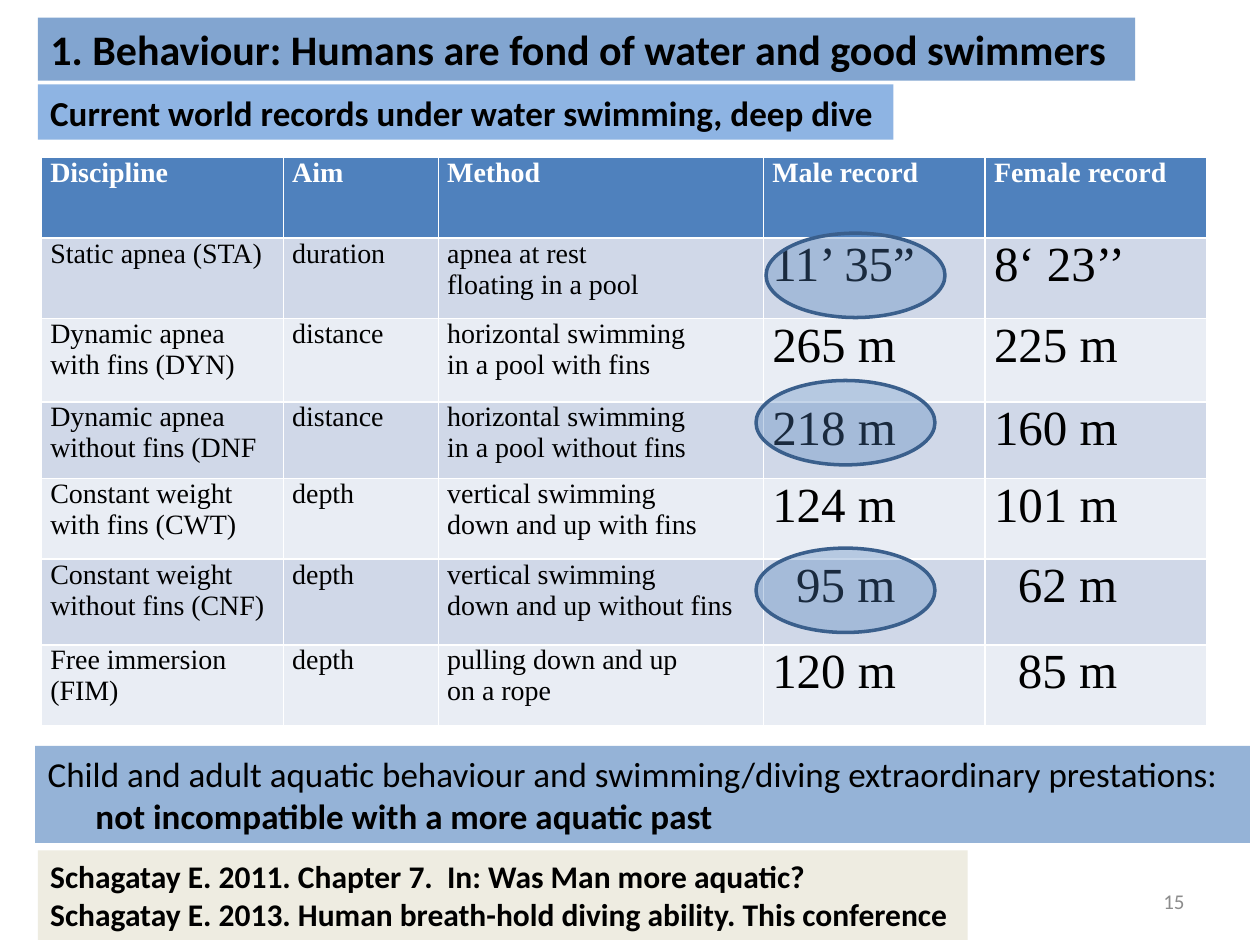
from dataclasses import dataclass

from lxml import etree
from pptx import Presentation
from pptx.dml.color import RGBColor
from pptx.enum.shapes import MSO_SHAPE
from pptx.enum.text import MSO_ANCHOR, MSO_AUTO_SIZE, PP_ALIGN
from pptx.oxml.ns import qn
from pptx.util import Inches, Pt

RECT, OVAL = MSO_SHAPE.RECTANGLE, MSO_SHAPE.OVAL
MIDDLE, NO_FIT = MSO_ANCHOR.MIDDLE, MSO_AUTO_SIZE.NONE
LEFT, RIGHT = PP_ALIGN.LEFT, PP_ALIGN.RIGHT


@dataclass(frozen=True)
class Theme:
    sans: str = "Calibri"
    serif: str = "Times New Roman"
    ink: str = "000000"
    white: str = "FFFFFF"
    accent: str = "4F81BD"
    outline: str = "3A5F8C"
    subtitle: str = "8EB4E3"
    conclusion: str = "95B3D7"
    sources: str = "EEECE1"
    muted: str = "8C8C8C"
    bands: tuple = ("E9EDF4", "D0D8E8")
    title_size: int = 24
    lead_size: int = 20
    source_size: int = 18
    cell_size: int = 16
    record_size: int = 28
    number_size: int = 12


T = Theme()
prs = Presentation()
prs.slide_width, prs.slide_height = Inches(10), Inches(7.5)
s = prs.slides.add_slide(prs.slide_layouts[5])


def share(x, y, w, h):
    """Turn percentages of the slide's width and height into lengths."""
    pw, ph = prs.slide_width / 100, prs.slide_height / 100
    return int(x * pw), int(y * ph), int(w * pw), int(h * ph)


def style(p, text, size, color=T.ink, bold=False, font=T.sans, align=LEFT, indent=0):
    """Write a paragraph; its indent is in inches."""
    p.text, p.alignment = text, align
    if indent:
        p._p.get_or_add_pPr().set("marL", str(Inches(indent)))
    p.font.name, p.font.size, p.font.bold = font, Pt(size), bold
    p.font.color.rgb = RGBColor.from_string(color)


# Title
title = s.shapes.title
title.left, title.top, title.width, title.height = share(3, 1.87, 87.1, 6.67)
title.text_frame.auto_size = NO_FIT
title.text_frame.vertical_anchor = MIDDLE
style(title.text_frame.paragraphs[0],
      "1. Behaviour: Humans are fond of water and good swimmers", T.title_size, bold=True)

# Table of records
columns = [19.2, 12.3, 25.8, 17.6, 17.6]
rows = [8.53, 8.53, 8.8, 8.13, 8.53, 9.07, 8.53]
records = [
    ("Discipline", "Aim", "Method", "Male record", "Female record"),
    ("Static apnea (STA)", "duration", "apnea at rest\nfloating in a pool", "11’ 35”", "8‘ 23’’"),
    ("Dynamic apnea with fins (DYN)", "distance",
     "horizontal swimming\nin a pool with fins", "265 m", "225 m"),
    ("Dynamic apnea without fins (DNF", "distance",
     "horizontal swimming\nin a pool without fins", "218 m", "160 m"),
    ("Constant weight with fins (CWT)", "depth",
     "vertical swimming\ndown and up with fins", "124 m", "101 m"),
    ("Constant weight without fins (CNF)", "depth",
     "vertical swimming\ndown and up without fins", "95 m", "62 m"),
    ("Free immersion (FIM)", "depth", "pulling down and up\non a rope", "120 m", "85 m"),
]
table = s.shapes.add_table(len(rows), len(columns),
                           *share(3.3, 16.67, sum(columns), sum(rows))).table
for col, width in zip(table.columns, columns):
    col.width = share(0, 0, width, 0)[2]
for i, (row, height) in enumerate(zip(table.rows, rows)):
    row.height = share(0, 0, 0, height)[3]
    header = i == 0
    for j, text in enumerate(records[i]):
        cell = table.cell(i, j)
        cell.margin_left = cell.margin_right = Inches(0.07)
        cell.margin_top = cell.margin_bottom = 0
        cell.fill.solid()
        cell.fill.fore_color.rgb = RGBColor.from_string(T.accent if header else T.bands[i % 2])
        record = j > 2 and not header
        two_digits = record and len(text) == len("95 m")
        tf = cell.text_frame
        for k, line in enumerate(text.split("\n")):
            p = tf.add_paragraph() if k else tf.paragraphs[0]
            style(p, line, T.record_size if record else T.cell_size,
                  T.white if header else T.ink, header, T.serif,
                  indent=0.19 if two_digits else 0)

# Filled text panels: place, colour, type size, lines of (text, bold, indent)
panels = [
    ((3, 8.93, 67.9, 5.87), T.subtitle, T.lead_size,
     [("Current world records under water swimming, deep dive", True, 0)]),
    ((3, 90, 73.8, 9.47), T.sources, T.source_size,
     [("Schagatay E. 2011. Chapter 7.  In: Was Man more aquatic?", True, 0),
      ("Schagatay E. 2013. Human breath-hold diving ability. This conference", True, 0)]),
    ((2.8, 78.93, 96.4, 10.27), T.conclusion, T.lead_size,
     [("Child and adult aquatic behaviour and swimming/diving extraordinary prestations:",
       False, 0),
      ("not incompatible with a more aquatic past", True, 0.38)]),
]
for place, color, size, lines in panels:
    sp = s.shapes.add_shape(RECT, *share(*place))
    sp.shadow.inherit = False
    sp.fill.solid()
    sp.fill.fore_color.rgb = RGBColor.from_string(color)
    sp.line.fill.background()
    tf = sp.text_frame
    tf.word_wrap = True
    for k, (text, bold, indent) in enumerate(lines):
        p = tf.add_paragraph() if k else tf.paragraphs[0]
        style(p, text, size, bold=bold, indent=indent)

# Ellipses around the highlighted male records
highlights = []
for x, y in [(60.8, 24.67), (60, 40.27), (60, 58)]:
    sp = s.shapes.add_shape(OVAL, *share(x, y, 14.2, 8.93))
    sp.shadow.inherit = False
    sp.line.color.rgb = RGBColor.from_string(T.outline)
    sp.line.width = Pt(2)
    highlights.append(sp)

# Translucent accent fills
for sp, opacity in [(title, 71)] + [(oval, 33) for oval in highlights]:
    sp.fill.solid()
    sp.fill.fore_color.rgb = RGBColor.from_string(T.accent)
    color = sp._element.spPr.find(qn("a:solidFill")).find(qn("a:srgbClr"))
    etree.SubElement(color, qn("a:alpha")).set("val", str(opacity * 1000))

# Slide number
number = s.shapes.add_textbox(*share(71.7, 92.67, 23.3, 5.33))
number.text_frame.word_wrap = True
number.text_frame.vertical_anchor = MIDDLE
style(number.text_frame.paragraphs[0], "15", T.number_size, T.muted, align=RIGHT)

prs.save("out.pptx")
